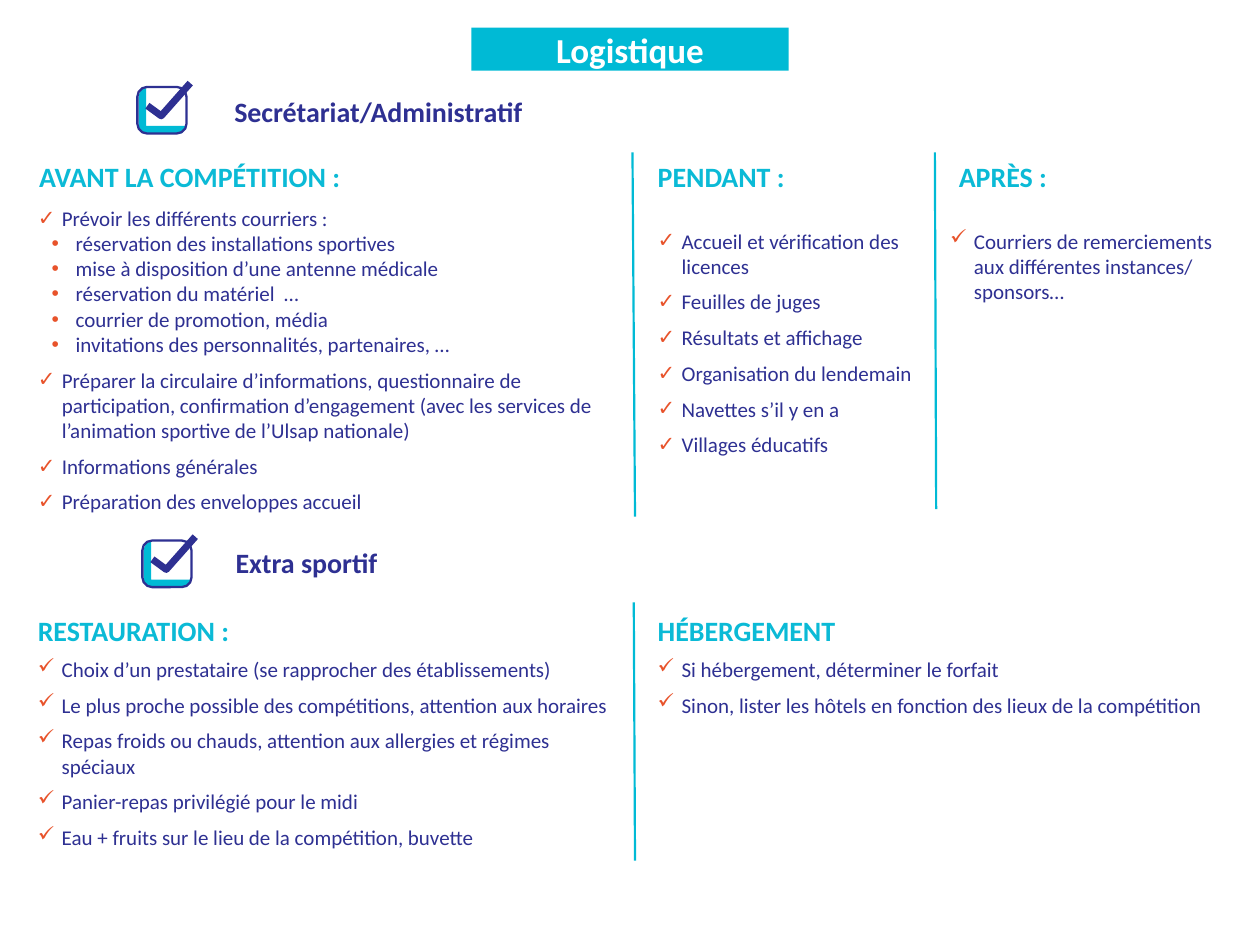
from lxml import etree
from pptx import Presentation, util as u
from pptx.dml.color import RGBColor
from pptx.enum import shapes, text
from pptx.oxml.ns import qn

Inches, Pt = u.Inches, u.Pt
NAVY, CYAN, HEADING, ORANGE, WHITE = "2E3092", "00BAD5", "0BBAD6", "E8532B", "FFFFFF"


def color(value):
    return RGBColor.from_string(value)


def fill_text(sp, box, items, size, ink, bold=False, bullets=None, **para):
    """Place sp and write (level, text) items; bullets maps level to (mark, indent, space before)."""
    sp.left, sp.top, sp.width, sp.height = map(Inches, box)
    tf = sp.text_frame
    frame = dict(word_wrap=True, auto_size=text.MSO_AUTO_SIZE.NONE,
                 vertical_anchor=text.MSO_ANCHOR.TOP, margin_left=0,
                 margin_right=0, margin_top=Inches(0.01), margin_bottom=0)
    for name, value in frame.items():
        setattr(tf, name, value)
    for i, (level, words) in enumerate(items):
        p = tf.add_paragraph() if i else tf.paragraphs[0]
        style = dict(alignment=text.PP_ALIGN.LEFT, line_spacing=1.0,
                     space_before=Pt(0), space_after=Pt(0), level=level) | para
        if bullets:
            mark, indent, gap = bullets[level]
            style["space_before"] = Pt(gap if i else 0)
            pPr = p._p.get_or_add_pPr()
            pPr.set("marL", str(Inches(indent)))
            pPr.set("indent", str(Inches(-0.19)))
            clr = etree.SubElement(pPr, qn("a:buClr"))
            etree.SubElement(clr, qn("a:srgbClr"), val=ORANGE)
            etree.SubElement(pPr, qn("a:buChar"), char=mark)
        for name, value in style.items():
            setattr(p, name, value)
        r = p.add_run()
        r.text = words
        for name, value in dict(name="Calibri", size=Pt(size), bold=bold).items():
            setattr(r.font, name, value)
        r.font.color.rgb = color(ink)


prs = Presentation()
prs.slide_width, prs.slide_height = Inches(10), Inches(7.5)
s = prs.slides.add_slide(prs.slide_layouts.get_by_name("Comparison"))
holders = {sp.placeholder_format.idx: sp for sp in s.placeholders}

# Title band
title = s.shapes.title
title.fill.solid()
title.fill.fore_color.rgb = color(CYAN)
fill_text(title, (3.74, 0.22, 2.52, 0.34), [(0, "Logistique")], 20, WHITE, True,
          alignment=text.PP_ALIGN.CENTER)

# Section labels, each with a ticked box
sections = [
    ("Secrétariat/Administratif", 1.86, 0.74, 1.09, 0.69),
    ("Extra sportif", 1.87, 4.32, 1.13, 4.29),
]
shade = [(0.07, 0.01), (0.03, 0.02), (0.01, 0.07), (0.01, 0.32), (0.03, 0.35),
         (0.06, 0.37), (0.35, 0.37), (0.39, 0.31), (0.07, 0.31)]
tick = [(0.08, 0.15), (0.19, 0.23), (0.42, -0.03)]
for label, x, y, left, top in sections:
    sp = s.shapes.add_textbox(0, 0, 0, 0)
    fill_text(sp, (x, y, 2.9, 0.28), [(0, label)], 16, NAVY, True)

    group = s.shapes.add_group_shape().shapes
    outlines = []
    for points, closed in ((shade, True), (tick, False)):
        points = [(Inches(left + dx), Inches(top + dy)) for dx, dy in points]
        builder = group.build_freeform(*points[0])
        builder.add_line_segments(points[1:], close=closed)
        outlines.append(builder.convert_to_shape())
    corner, check = outlines
    frame = group.add_shape(shapes.MSO_SHAPE.ROUNDED_RECTANGLE, Inches(left), Inches(top),
                            Inches(0.39), Inches(0.37))
    frame.adjustments[0] = 0.21
    corner.fill.solid()
    corner.fill.fore_color.rgb = color(CYAN)
    corner.line.fill.background()
    for sp, width in ((frame, 1.3), (check, 4)):
        sp.fill.background()
        sp.line.color.rgb = color(NAVY)
        sp.line.width = Pt(width)
    for sp in (corner, frame, check):
        sp.shadow.inherit = False

# Columns: heading, heading box, list box, items, placeholder indexes
columns = [
    ("AVANT LA COMPÉTITION :", (0.31, 1.26, 2.73, 0.28), (0.29, 1.62, 4.63, 2.49), [
        (0, "Prévoir les différents courriers :"),
        (1, "réservation des installations sportives"),
        (1, "mise à disposition d’une antenne médicale"),
        (1, "réservation du matériel  …"),
        (1, "courrier de promotion, média"),
        (1, "invitations des personnalités, partenaires, …"),
        (0, "Préparer la circulaire d’informations, questionnaire de participation, "
            "confirmation d’engagement (avec les services de l’animation sportive "
            "de l’Ulsap nationale)"),
        (0, "Informations générales"),
        (0, "Préparation des enveloppes accueil"),
    ], (1, 2)),
    ("PENDANT :", (5.22, 1.26, 1.18, 0.28), (5.21, 1.8, 2.12, 2.13), [
        (0, "Accueil et vérification des licences"),
        (0, "Feuilles de juges"),
        (0, "Résultats et affichage"),
        (0, "Organisation du lendemain"),
        (0, "Navettes s’il y en a"),
        (0, "Villages éducatifs"),
    ], (3, 4)),
    ("APRÈS :", (7.61, 1.26, 1.18, 0.28), (7.53, 1.8, 2.12, 0.62), [
        (0, "Courriers de remerciements aux différentes instances/ sponsors…"),
    ], None),
    ("RESTAURATION :", (0.3, 4.86, 3.88, 0.28), (0.29, 5.2, 4.63, 1.56), [
        (0, "Choix d’un prestataire (se rapprocher des établissements)"),
        (0, "Le plus proche possible des compétitions, attention aux horaires"),
        (0, "Repas froids ou chauds, attention aux allergies et régimes spéciaux"),
        (0, "Panier-repas privilégié pour le midi"),
        (0, "Eau + fruits sur le lieu de la compétition, buvette"),
    ], None),
    ("HÉBERGEMENT", (5.22, 4.86, 4.5, 0.28), (5.21, 5.2, 4.63, 0.5), [
        (0, "Si hébergement, déterminer le forfait"),
        (0, "Sinon, lister les hôtels en fonction des lieux de la compétition"),
    ], None),
]
marks = {0: ("✓", 0.2, 6), 1: ("•", 0.31, 0)}
for heading, heading_box, list_box, items, indexes in columns:
    if indexes:
        head, body = (holders[i] for i in indexes)
    else:
        head, body = (s.shapes.add_textbox(0, 0, 0, 0) for _ in range(2))
    fill_text(head, heading_box, [(0, heading)], 16, HEADING, True, line_spacing=Pt(19.1))
    fill_text(body, list_box, items, 12, NAVY, bullets=marks)

# Column dividers
for x1, y1, x2, y2 in ((5.02, 1.21, 5.04, 4.1), (7.42, 1.21, 7.43, 4.04),
                       (5.03, 4.78, 5.04, 6.83)):
    line = s.shapes.add_connector(shapes.MSO_CONNECTOR.STRAIGHT,
                                  *map(Inches, (x1, y1, x2, y2)))
    line.line.color.rgb = color(CYAN)
    line.line.width = Pt(1.25)
    etree.SubElement(line._element.spPr, qn("a:effectLst"))

prs.save("out.pptx")
